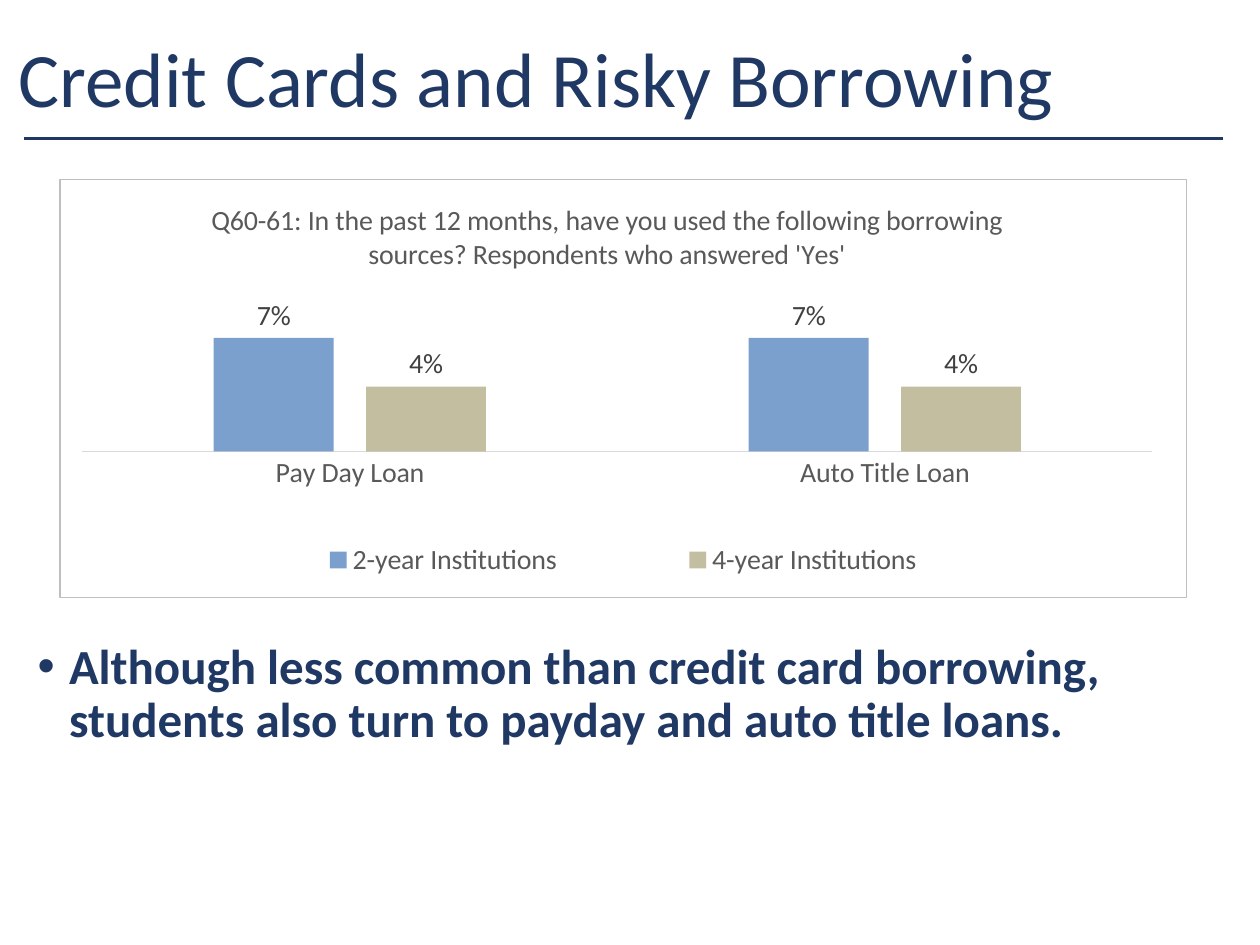
import pptx
import pptx.chart.data
import pptx.dml.color
import pptx.enum.chart
import pptx.enum.shapes
import pptx.enum.text
import pptx.oxml
import pptx.oxml.ns
import pptx.util
from pptx.util import Inches

COLORS = {"navy": "203864", "blue": "4F81BD", "khaki": "948A54", "label": "404040",
          "grey": "595959", "axis": "D9D9D9", "border": "BFBFBF"}
QUESTION = ("Q60-61: In the past 12 months, have you used the following borrowing "
            "sources? Respondents who answered 'Yes'")


class SlideBuilder:
    """Holds the slide style and draws each kind of element."""

    font_name = "Calibri"
    percent = '0"%"'

    def __init__(self, slide):
        self.slide = slide

    def color(self, key):
        return pptx.dml.color.RGBColor.from_string(COLORS[key])

    def apply(self, target, formats):
        for name, value in formats.items():
            setattr(target, name, value)

    def style(self, font, size, color, bold=False):
        self.apply(font, {"name": self.font_name, "size": pptx.util.Pt(size), "bold": bold})
        font.color.rgb = self.color(color)

    def element(self, xml):
        spaces = pptx.oxml.ns.nsdecls("a", "c")
        return pptx.oxml.parse_xml(xml.replace(">", f" {spaces}>", 1))

    def rule(self, start, end, color, width):
        rule = self.slide.shapes.add_connector(
            pptx.enum.shapes.MSO_CONNECTOR.STRAIGHT, *map(Inches, start + end))
        rule.line.color.rgb = self.color(color)
        rule.line.width = pptx.util.Pt(width)
        rule._element.spPr.append(self.element("<a:effectLst></a:effectLst>"))

    def text(self, box, wording, size, bold=False, bullet=False, anchor="TOP"):
        frame = self.slide.shapes.add_textbox(*map(Inches, box)).text_frame
        self.apply(frame, {"word_wrap": True,
                           "vertical_anchor": getattr(pptx.enum.text.MSO_ANCHOR, anchor)})
        paragraph = frame.paragraphs[0]
        paragraph.line_spacing = 0.9
        if bullet:
            properties = paragraph._p.get_or_add_pPr()
            properties.set("marL", str(Inches(0.25)))
            properties.set("indent", str(Inches(-0.25)))
            properties.append(self.element('<a:buFont typeface="Arial"></a:buFont>'))
            properties.append(self.element('<a:buChar char="•"></a:buChar>'))
        run = paragraph.add_run()
        run.text = wording
        self.style(run.font, size, "navy", bold)

    def place(self, part, index, inner=False, **layout):
        for old in part.findall(pptx.oxml.ns.qn("c:layout")):
            part.remove(old)
        target = '<c:layoutTarget val="inner"/>' if inner else ""
        modes = "".join(f'<c:{axis}Mode val="edge"/>' for axis in "xy")
        values = "".join(f'<c:{key} val="{value}"/>' for key, value in layout.items())
        part.insert(index, self.element(
            f"<c:layout><c:manualLayout>{target}{modes}{values}</c:manualLayout></c:layout>"))

    def column_chart(self, box, title, categories, series):
        data = pptx.chart.data.CategoryChartData(number_format=self.percent)
        data.categories = categories
        for name, values, _, _ in series:
            data.add_series(name, values)
        kinds = pptx.enum.chart
        chart = self.slide.shapes.add_chart(
            kinds.XL_CHART_TYPE.COLUMN_CLUSTERED, *map(Inches, box), data).chart
        self.style(chart.font, 16, "grey")

        chart.has_title = True
        chart.chart_title.include_in_layout = False
        heading = chart.chart_title.text_frame.paragraphs[0].add_run()
        heading.text = title
        self.style(heading.font, 16, "grey")
        self.place(chart.chart_title._element, 1, x=0.13, y=0.04)

        chart.has_legend = True
        self.apply(chart.legend, {"position": kinds.XL_LEGEND_POSITION.BOTTOM,
                                  "include_in_layout": False})
        self.style(chart.legend.font, 16, "grey")
        self.place(chart.legend._element, 1, x=0.13, y=0.86, w=0.74, h=0.1)

        no_ticks = {"major_tick_mark": kinds.XL_TICK_MARK.NONE,
                    "minor_tick_mark": kinds.XL_TICK_MARK.NONE,
                    "has_major_gridlines": False}
        self.apply(chart.category_axis, no_ticks)
        self.style(chart.category_axis.tick_labels.font, 16, "grey")
        chart.category_axis.format.line.color.rgb = self.color("axis")
        chart.category_axis.format.line.width = pptx.util.Pt(0.75)
        self.apply(chart.value_axis, {
            **no_ticks, "minimum_scale": 0, "maximum_scale": 8,
            "tick_label_position": kinds.XL_TICK_LABEL_POSITION.NONE})
        chart.value_axis.format.line.fill.background()

        plot = chart.plots[0]
        self.apply(plot, {"gap_width": 219, "overlap": -27, "vary_by_categories": False})
        for columns, (_, _, color, opacity) in zip(plot.series, series):
            fill = columns.format.fill
            fill.solid()
            fill.fore_color.rgb = self.color(color)
            shade = columns._element.find(".//" + pptx.oxml.ns.qn("a:srgbClr"))
            shade.append(self.element(f'<a:alpha val="{opacity * 1000}"></a:alpha>'))
            labels = columns.data_labels
            self.apply(labels, {"show_value": True, "number_format": self.percent,
                                "number_format_is_linked": False,
                                "position": kinds.XL_LABEL_POSITION.OUTSIDE_END})
            self.style(labels.font, 16, "label")

        body = chart._chartSpace.find(pptx.oxml.ns.qn("c:chart"))
        self.place(body.find(pptx.oxml.ns.qn("c:plotArea")), 0, inner=True,
                   x=0.02, y=0.34, w=0.95, h=0.31)
        body.addnext(self.element(
            f'<c:spPr><a:noFill/><a:ln w="{pptx.util.Pt(0.75)}"><a:solidFill>'
            f'<a:srgbClr val="{COLORS["border"]}"/></a:solidFill></a:ln></c:spPr>'))


def main():
    deck = pptx.Presentation()
    deck.slide_width, deck.slide_height = Inches(10), Inches(7.5)
    builder = SlideBuilder(deck.slides.add_slide(deck.slide_layouts[6]))
    builder.rule((9.71, 1.1), (0.19, 1.1), "navy", 1.75)
    builder.text((0.05, 0.22, 8.62, 0.87), "Credit Cards and Risky Borrowing", 44,
                 anchor="MIDDLE")
    builder.text((0.2, 5.05, 9.69, 1.77),
                 "Although less common than credit card borrowing, "
                 "students also turn to payday and auto title loans.",
                 28, bold=True, bullet=True)
    builder.column_chart((0.47, 1.42, 8.95, 3.33), QUESTION,
                         ("Pay Day Loan", "Auto Title Loan"),
                         (("2-year Institutions", (7, 7), "blue", 75),
                          ("4-year Institutions", (4, 4), "khaki", 55)))
    deck.save("out.pptx")


if __name__ == "__main__":
    main()
